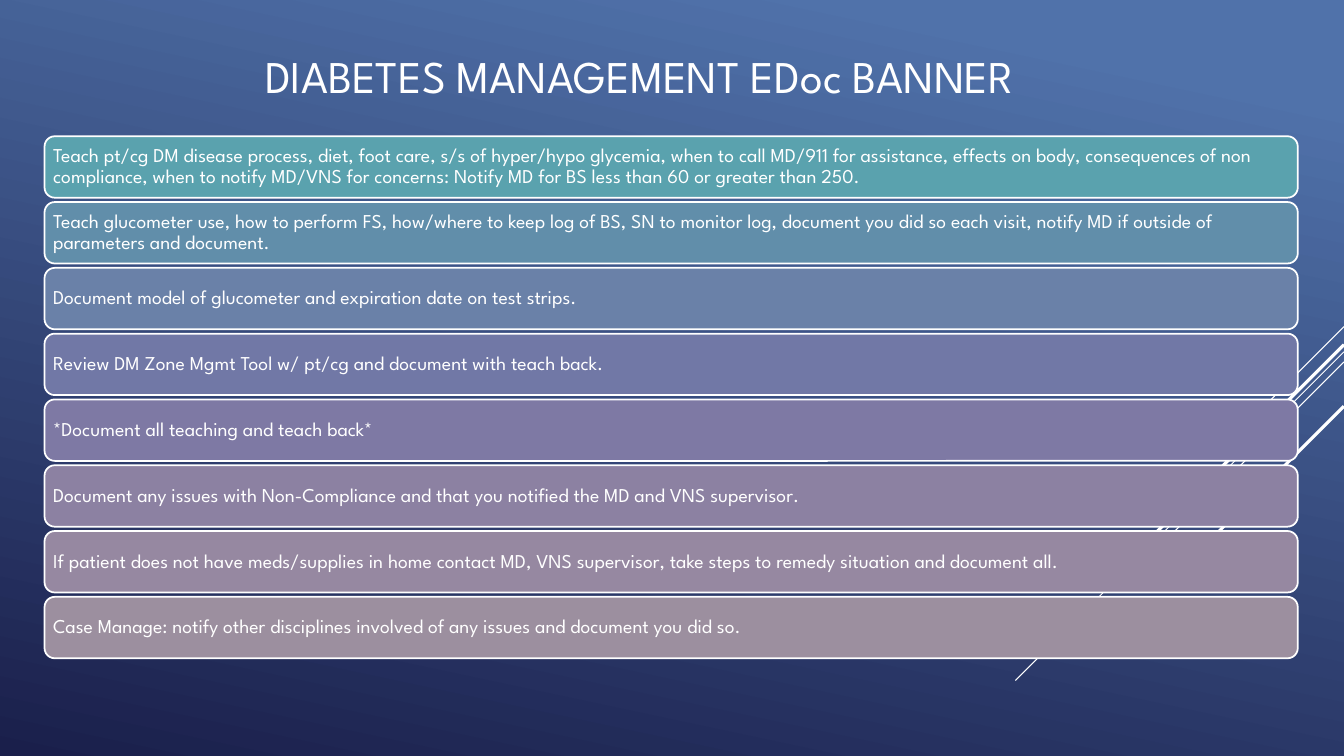
import pptx
import pptx.dml.color
import pptx.enum.shapes
import pptx.enum.text
import pptx.oxml
import pptx.util

Pt = pptx.util.Pt

# Content
TITLE = "DIABETES MANAGEMENT EDoc BANNER"
STEPS = [  # text, bar fill
    ("Teach pt/cg DM disease process, diet, foot care, s/s of hyper/hypo glycemia, "
     "when to call MD/911 for assistance, effects on body, consequences of non "
     "compliance, when to notify MD/VNS for concerns: Notify MD for BS less than 60 "
     "or greater than 250.", "5AA2AE"),
    ("Teach glucometer use, how to perform FS, how/where to keep log of BS, SN to "
     "monitor log, document you did so each visit, notify MD if outside of "
     "parameters and document.", "618EAA"),
    ("Document model of glucometer and expiration date on test strips.", "6A81A8"),
    ("Review DM Zone Mgmt Tool w/ pt/cg and document with teach back.", "7178A6"),
    ("*Document all teaching and teach back*", "7E79A4"),
    ("Document any issues with Non-Compliance and that you notified the MD and VNS "
     "supervisor.", "8C81A2"),
    ("If patient does not have meds/supplies in home contact MD, VNS supervisor, "
     "take steps to remedy situation and document all.", "9688A1"),
    ("Case Manage: notify other disciplines involved of any issues and document you "
     "did so.", "9C8F9F"),
]
# Diagonal streaks: height at the right edge, run to the lower left, line width
STREAKS = [(233.3, 72, 0.75), (251.3, 234.7, 0.75), (258.5, 149, 0.75),
           (246.2, 137.5, 2.25), (290.2, 100, 2.25)]

FONT = "League Spartan"
WHITE = "FFFFFF"
SLIDE_W, SLIDE_H = 960, 540
BAR_LEFT, BAR_TOP, BAR_W, BAR_H, BAR_PITCH = 31.8, 97.3, 895.2, 43.9, 47


def color(hex_value):
    return pptx.dml.color.RGBColor.from_string(hex_value)


def style_text(paragraph, size):
    paragraph.alignment = pptx.enum.text.PP_ALIGN.LEFT
    paragraph.font.name = FONT
    paragraph.font.size = Pt(size)
    paragraph.font.color.rgb = color(WHITE)


def set_frame(frame, side, top):
    frame.word_wrap = True
    frame.vertical_anchor = pptx.enum.text.MSO_ANCHOR.MIDDLE
    frame.margin_left = frame.margin_right = Pt(side)
    frame.margin_top = frame.margin_bottom = Pt(top)


def add_streak(slide, right_y, run, width):
    streak = slide.shapes.add_connector(
        pptx.enum.shapes.MSO_CONNECTOR.STRAIGHT,
        Pt(SLIDE_W), Pt(right_y), Pt(SLIDE_W - run), Pt(right_y + run))
    streak.line.color.rgb = color(WHITE)
    streak.line.width = Pt(width)
    properties = streak._element.spPr
    properties.append(properties.makeelement(pptx.oxml.ns.qn("a:effectLst"), {}))


def add_bar(slide, row, text, fill):
    bar = slide.shapes.add_shape(
        pptx.enum.shapes.MSO_SHAPE.ROUNDED_RECTANGLE,
        Pt(BAR_LEFT), Pt(BAR_TOP + row * BAR_PITCH), Pt(BAR_W), Pt(BAR_H))
    bar.shadow.inherit = False
    bar.fill.solid()
    bar.fill.fore_color.rgb = color(fill)
    bar.line.color.rgb = color(WHITE)
    bar.line.width = Pt(1.25)
    set_frame(bar.text_frame, 4, 4)
    step = bar.text_frame.paragraphs[0]
    step.text = text
    step.line_spacing = 0.9
    style_text(step, 14)


def main():
    deck = pptx.Presentation()
    deck.slide_width, deck.slide_height = Pt(SLIDE_W), Pt(SLIDE_H)
    slide = deck.slides.add_slide(deck.slide_layouts[5])

    # Background gradient
    backdrop = slide.background.fill
    backdrop.gradient()
    backdrop.gradient_angle = 258
    for stop, (position, shade) in zip(backdrop.gradient_stops,
                                       [(0.1, "5072AA"), (1, "1A1F4B")]):
        stop.position = position
        stop.color.rgb = color(shade)

    # Title
    heading = slide.shapes.title
    heading.left, heading.top = Pt(182.2), Pt(9.4)
    heading.width, heading.height = Pt(668.9), Pt(89.3)
    heading.text_frame.text = TITLE
    heading.text_frame.auto_size = pptx.enum.text.MSO_AUTO_SIZE.NONE
    set_frame(heading.text_frame, 7.2, 3.6)
    style_text(heading.text_frame.paragraphs[0], 32.4)

    # Streaks, then the bars over them
    for streak in STREAKS:
        add_streak(slide, *streak)
    for row, (text, fill) in enumerate(STEPS):
        add_bar(slide, row, text, fill)

    deck.save("out.pptx")


if __name__ == "__main__":
    main()
